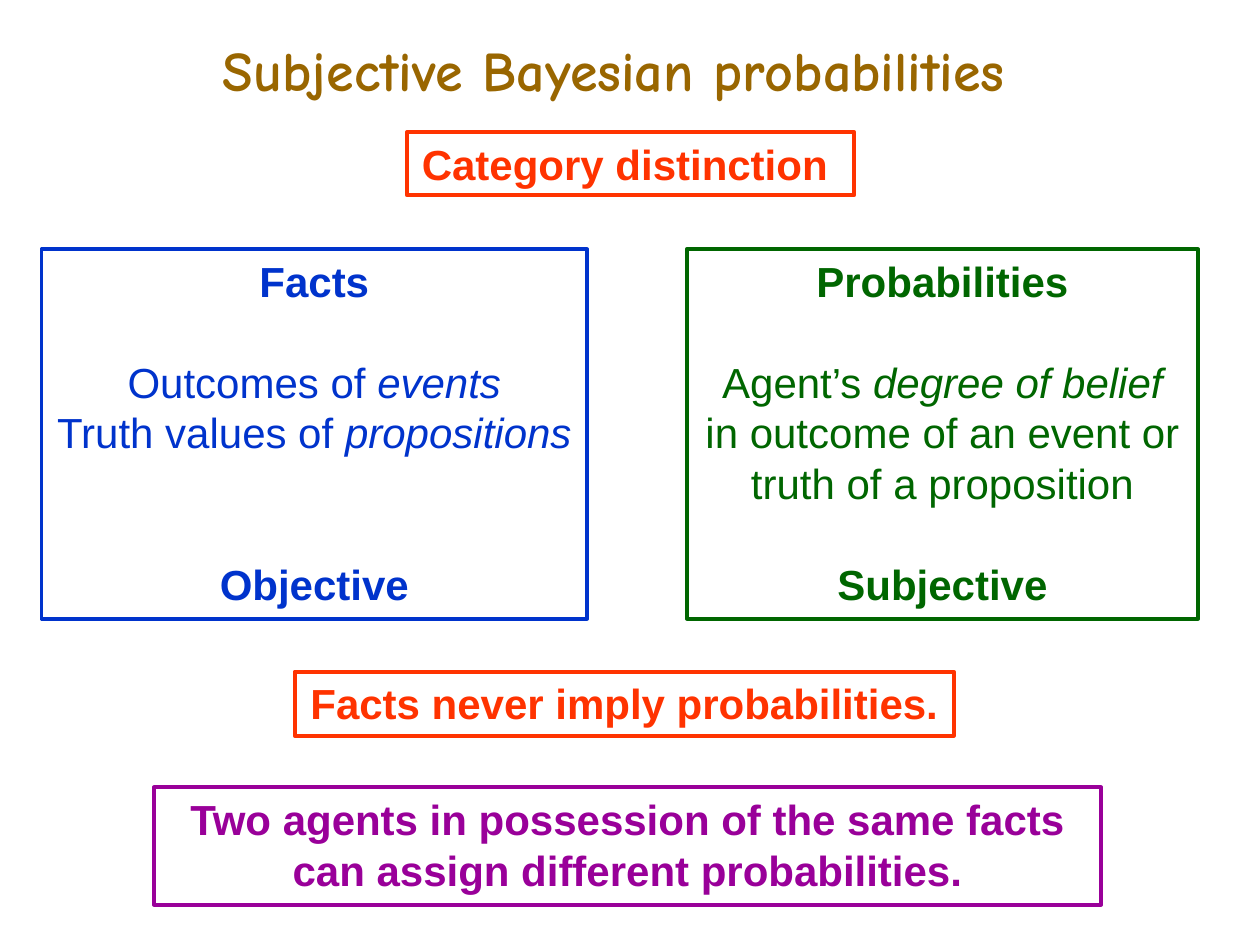
from dataclasses import dataclass

import pptx
import pptx.dml.color
import pptx.enum.shapes
import pptx.enum.text
import pptx.util

Inches = pptx.util.Inches
Pt = pptx.util.Pt
RGB = pptx.dml.color.RGBColor.from_string


@dataclass(frozen=True)
class Theme:
    brown: str = "996600"
    blue: str = "0033CC"
    green: str = "006600"
    red: str = "FF3300"
    purple: str = "990099"
    title_font: str = "Comic Neue"
    body_font: str = "Arial"
    title_size: float = 32
    body_size: float = 24
    line_pitch: float = 28.8
    border: float = 2.25


THEME = Theme()


def style_paragraph(p, font, size, color, bold):
    p.alignment = pptx.enum.text.PP_ALIGN.CENTER
    p.font.name = font
    p.font.size = Pt(size)
    p.font.color.rgb = RGB(color)
    p.font.bold = bold


def add_title(slide, box, text):
    tf = slide.shapes.add_textbox(*map(Inches, box)).text_frame
    tf.word_wrap = True
    p = tf.paragraphs[0]
    p.text = text
    style_paragraph(p, THEME.title_font, THEME.title_size, THEME.brown, True)


def add_frame(slide, box, color, wrap):
    rectangle = pptx.enum.shapes.MSO_SHAPE.RECTANGLE
    sp = slide.shapes.add_shape(rectangle, *map(Inches, box))
    sp.shadow.inherit = False
    sp.fill.background()
    sp.line.color.rgb = RGB(color)
    sp.line.width = Pt(THEME.border)
    tf = sp.text_frame
    tf.word_wrap = wrap
    tf.vertical_anchor = pptx.enum.text.MSO_ANCHOR.TOP
    return tf


def add_line(tf, index, color, plain, italic="", bold=False, gap=0):
    p = tf.add_paragraph() if index else tf.paragraphs[0]
    style_paragraph(p, THEME.body_font, THEME.body_size, color, bold)
    p.line_spacing = Pt(THEME.line_pitch)
    p.space_before = Pt(gap * THEME.line_pitch)
    p.add_run().text = plain
    if italic:
        r = p.add_run()
        r.text = italic
        r.font.italic = True


def add_statement(slide, box, color, text, wrap=False):
    add_line(add_frame(slide, box, color, wrap), 0, color, text, bold=True)


def add_category(slide, box, color, heading, lines, verdict, gap, wrap):
    tf = add_frame(slide, box, color, wrap)
    add_line(tf, 0, color, heading, bold=True)
    for i, (plain, italic) in enumerate(lines, 1):
        add_line(tf, i, color, plain, italic, gap=1 if i == 1 else 0)
    add_line(tf, len(lines) + 1, color, verdict, bold=True, gap=gap)


def main():
    prs = pptx.Presentation()
    prs.slide_width, prs.slide_height = Inches(10), Inches(7.5)
    slide = prs.slides.add_slide(prs.slide_layouts[6])

    add_title(slide, (0, 0.23, 9.75, 0.63), "Subjective Bayesian probabilities")
    add_statement(slide, (3.23, 1.05, 3.55, 0.5), THEME.red, "Category distinction ")
    add_category(
        slide, (0.33, 1.98, 4.33, 2.93), THEME.blue, "Facts",
        [("Outcomes of ", "events"), ("Truth values of ", "propositions")],
        "Objective", gap=2, wrap=False,
    )
    add_category(
        slide, (5.45, 1.98, 4.06, 2.93), THEME.green, "Probabilities",
        [
            ("Agent’s ", "degree of belief"),
            ("in outcome of an event or", ""),
            ("truth of a proposition", ""),
        ],
        "Subjective", gap=1, wrap=True,
    )
    add_statement(
        slide, (2.34, 5.33, 5.23, 0.51), THEME.red,
        "Facts never imply probabilities.",
    )
    add_statement(
        slide, (1.22, 6.25, 7.52, 0.93), THEME.purple,
        "Two agents in possession of the same facts can assign different probabilities.",
        wrap=True,
    )
    prs.save("out.pptx")


if __name__ == "__main__":
    main()
